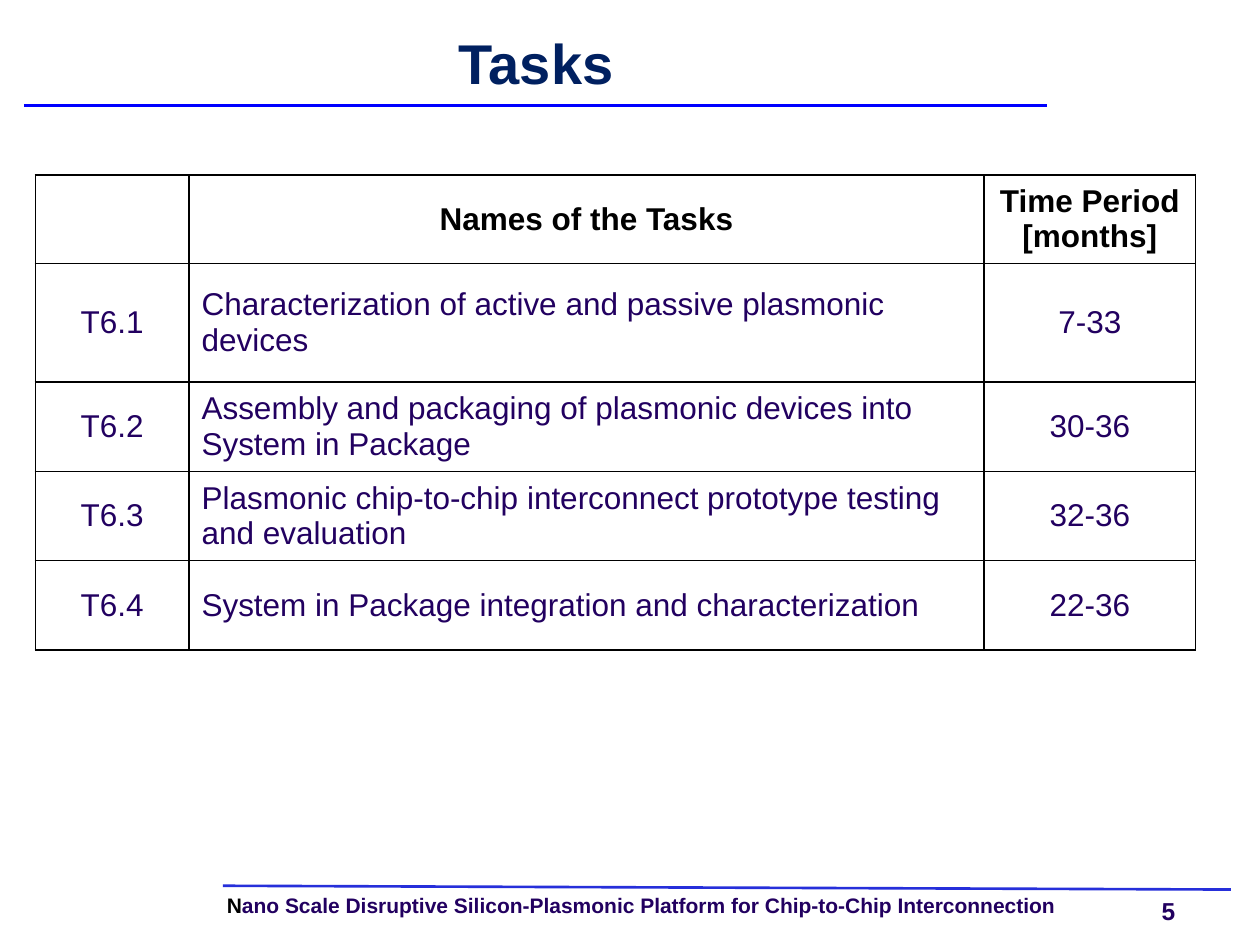
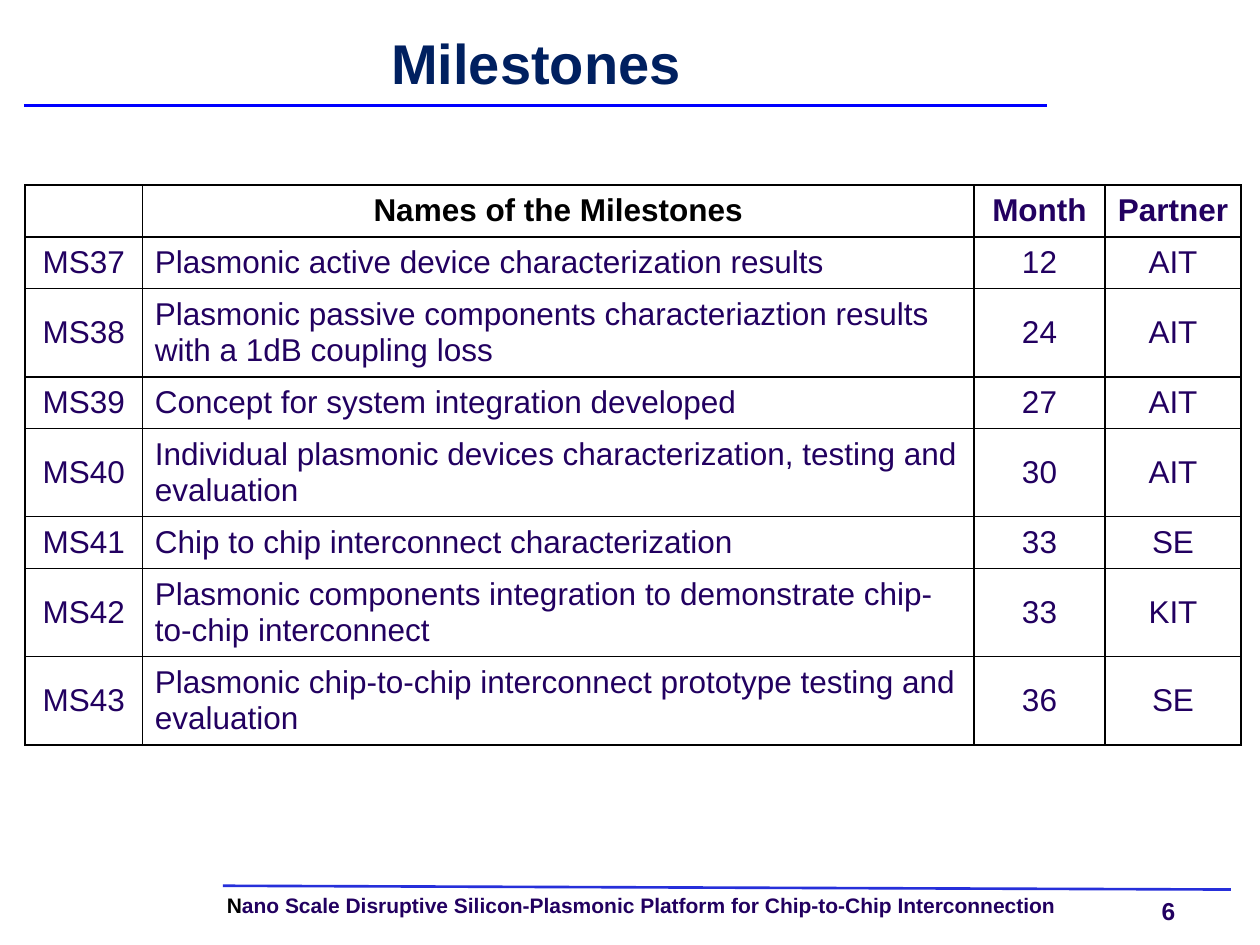
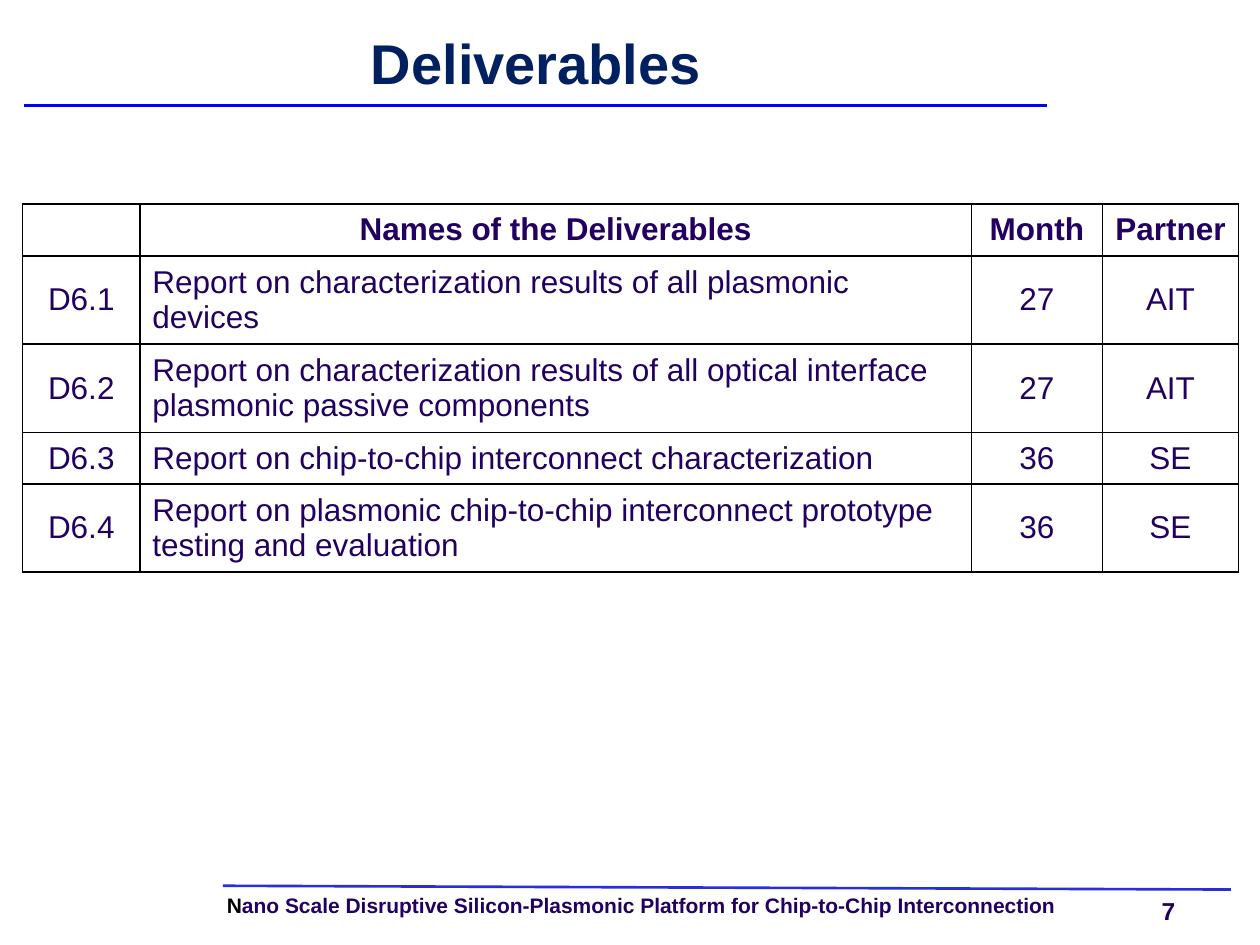
from pptx import Presentation
from pptx.dml.color import RGBColor
from pptx.enum.shapes import MSO_CONNECTOR
from pptx.enum.text import MSO_ANCHOR, PP_ALIGN
from pptx.oxml.ns import qn
from pptx.util import Inches, Pt
from lxml import etree

LINE = MSO_CONNECTOR.STRAIGHT
MIDDLE = MSO_ANCHOR.MIDDLE
LEFT, CENTER = PP_ALIGN.LEFT, PP_ALIGN.CENTER

# Shared look
FONT = "Arial"
BLACK, WHITE = "000000", "FFFFFF"
PURPLE, NAVY = "220060", "002060"
RULES = [((0.19, 0.84, 8.31, 0.84), "0000FF"),
         ((1.77, 7.03, 9.77, 7.06), "262FDA")]
FOOT = ["N", "ano Scale Disruptive Silicon-Plasmonic Platform for Chip-to-Chip Interconnection"]
ONE, TWO = 0.41, 0.66  # row heights for one and two lines of text
WIDE = [0.93, 6.6, 1.04, 1.08]

# Slide content: title, table corner, columns, row heights, head colours, rows
PAGES = [
    ("Tasks", (0.28, 1.39), [1.22, 6.31, 1.68],
     [TWO, 0.94, 0.71, 0.71, 0.71], [BLACK] * 3, [
         ["", "Names of the Tasks", "Time Period [months]"],
         ["T6.1", "Characterization of active and passive plasmonic devices", "7-33"],
         ["T6.2", "Assembly and packaging of plasmonic devices into System in Package", "30-36"],
         ["T6.3", "Plasmonic chip-to-chip interconnect prototype testing and evaluation", "32-36"],
         ["T6.4", "System in Package integration and characterization", "22-36"]]),
    ("Milestones", (0.2, 1.47), WIDE,
     [ONE, ONE, TWO, ONE, TWO, ONE, TWO, TWO], [BLACK, BLACK, PURPLE, PURPLE], [
         ["", "Names of the Milestones", "Month", "Partner"],
         ["MS37", "Plasmonic active device characterization results", "12", "AIT"],
         ["MS38", "Plasmonic passive components characteriaztion results with a 1dB coupling loss", "24", "AIT"],
         ["MS39", "Concept for system integration developed", "27", "AIT"],
         ["MS40", "Individual plasmonic devices characterization, testing and evaluation", "30", "AIT"],
         ["MS41", "Chip to chip interconnect characterization", "33", "SE"],
         ["MS42", "Plasmonic components integration to demonstrate chip-to-chip interconnect", "33", "KIT"],
         ["MS43", "Plasmonic chip-to-chip interconnect prototype testing and evaluation", "36", "SE"]]),
    ("Deliverables", (0.18, 1.62), WIDE,
     [ONE, TWO, TWO, ONE, TWO], [PURPLE] * 4, [
         ["", "Names of the Deliverables", "Month", "Partner"],
         ["D6.1", "Report on characterization results of all plasmonic devices", "27", "AIT"],
         ["D6.2", "Report on characterization results of all optical interface plasmonic passive components", "27", "AIT"],
         ["D6.3", "Report on chip-to-chip interconnect characterization", "36", "SE"],
         ["D6.4", "Report on plasmonic chip-to-chip interconnect prototype testing and evaluation", "36", "SE"]]),
]


def paint(font, color, size, bold=True):
    font.name, font.size, font.bold = FONT, Pt(size), bold
    font.color.rgb = RGBColor.from_string(color)


def add_text(slide, box, parts, colors, size, wrap=True):
    frame = slide.shapes.add_textbox(*map(Inches, box)).text_frame
    frame.margin_left = frame.margin_right = 0
    frame.margin_top = frame.margin_bottom = 0
    frame.word_wrap = wrap
    for part, color in zip(parts, colors):
        run = frame.paragraphs[0].add_run()
        run.text = part
        paint(run.font, color, size)
    return frame


deck = Presentation()
deck.slide_width, deck.slide_height = Inches(10), Inches(7.5)

for number, (title, corner, cols, heights, heads, rows) in enumerate(PAGES, 5):
    slide = deck.slides.add_slide(deck.slide_layouts[6])

    # Footer and page number
    foot = add_text(slide, (1.8, 7.11, 7.14, 0.18), FOOT, [BLACK, PURPLE], 12)
    foot.paragraphs[0].line_spacing = 0.9
    add_text(slide, (9.22, 7.11, 0.4, 0.23), [str(number)], [PURPLE], 14, False)

    # Rules under the title and over the footer
    for ends, color in RULES:
        rule = slide.shapes.add_connector(LINE, *map(Inches, ends))
        rule.line.color.rgb = RGBColor.from_string(color)
        rule.line.width = Pt(1.5)
        etree.SubElement(rule._element.spPr, qn("a:effectLst"))

    # Title
    head = add_text(slide, (0.2, 0.2, 8.11, 0.67), [title], [NAVY], 32)
    head.vertical_anchor = MIDDLE
    head.paragraphs[0].alignment = CENTER
    head.paragraphs[0].line_spacing = Pt(32)

    # Table
    size = sum(cols), sum(heights)
    table = slide.shapes.add_table(len(rows), len(cols), *map(Inches, corner + size)).table
    table.first_row = table.horz_banding = False
    for col, width in zip(table.columns, cols):
        col.width = Inches(width)
    for r, (row, height) in enumerate(zip(rows, heights)):
        table.rows[r].height = Inches(height)
        for c, text in enumerate(row):
            cell = table.cell(r, c)
            cell.vertical_anchor = MIDDLE
            para = cell.text_frame.paragraphs[0]
            para.text = text
            para.alignment = LEFT if r and c == 1 else CENTER
            for run in para.runs:
                paint(run.font, PURPLE if r else heads[c], 18, r == 0)
            # Borders go before the fill in the cell properties
            props = cell._tc.get_or_add_tcPr()
            for side in ("lnL", "lnR", "lnT", "lnB"):
                edge = etree.SubElement(props, qn("a:" + side), w=str(Pt(1)))
                fill = etree.SubElement(edge, qn("a:solidFill"))
                etree.SubElement(fill, qn("a:srgbClr"), val=BLACK)
            cell.fill.solid()
            cell.fill.fore_color.rgb = RGBColor.from_string(WHITE)

deck.save("out.pptx")
